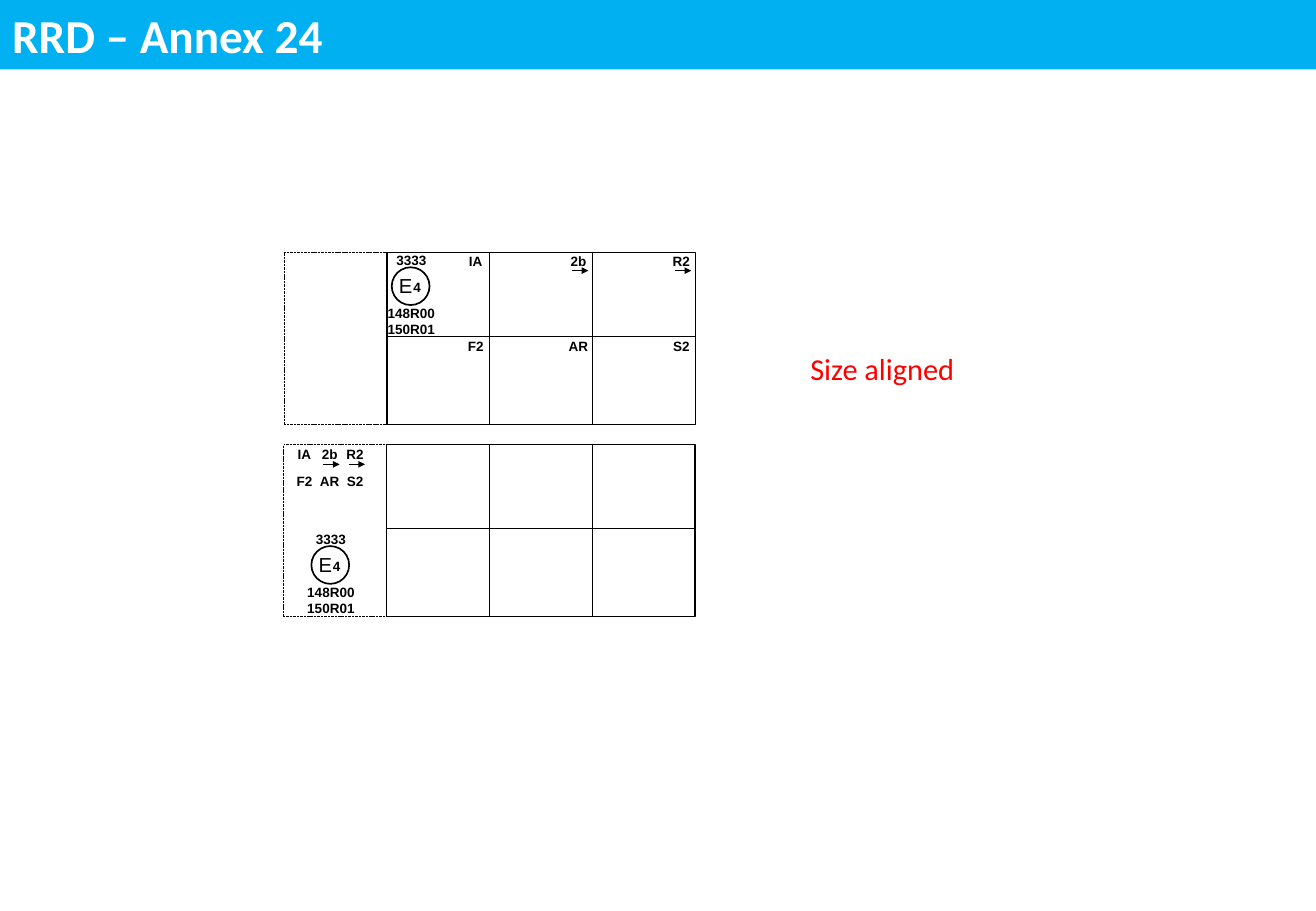
"""Build the RRD Annex 24 slide with two lamp marking diagrams."""
from dataclasses import dataclass
from typing import Any

from lxml import etree
from pptx import Presentation
from pptx.dml.color import RGBColor
from pptx.enum.dml import MSO_LINE
from pptx.enum.shapes import MSO_CONNECTOR, MSO_SHAPE
from pptx.enum.text import MSO_ANCHOR, MSO_AUTO_SIZE, PP_ALIGN
from pptx.oxml.ns import qn
from pptx.util import Cm, Pt

BLACK = RGBColor(0x00, 0x00, 0x00)
WHITE = RGBColor(0xFF, 0xFF, 0xFF)
RED = RGBColor(0xFF, 0x00, 0x00)
BLUE = RGBColor(0x00, 0xB0, 0xF0)

STRAIGHT = MSO_CONNECTOR.STRAIGHT
RECTANGLE = MSO_SHAPE.RECTANGLE
OVAL = MSO_SHAPE.OVAL
SHORT_DASH = MSO_LINE.SQUARE_DOT
LEFT = PP_ALIGN.LEFT
CENTER = PP_ALIGN.CENTER
MIDDLE = MSO_ANCHOR.MIDDLE
TOP = MSO_ANCHOR.TOP
NO_AUTOFIT = MSO_AUTO_SIZE.NONE

TITLE_FORMAT = {"name": "Calibri", "size": Pt(28), "bold": True}
NOTE_FORMAT = {"name": "Calibri", "size": Pt(18), "bold": False}
CODE_FORMAT = {"name": "Arial", "size": Pt(8), "bold": True}
LETTER_FORMAT = {"name": "Arial", "size": Pt(12), "bold": False}
ARROWHEAD_FORMAT = {"type": "triangle", "w": "sm", "len": "sm"}

COLUMN_WIDTH = 2.15
COLUMNS = 3
GRID_HEIGHT = 3.6
UPPER_ROW_HEIGHT = 1.75
DASH_OVERLAP = 0.84
CIRCLE_SIZE = 0.79
ARROW_START = 0.36
ARROW_END = 0.7
ARROW_DROP = 0.5
LAMP_CODES = (("IA", "2b", "R2"), ("F2", "AR", "S2"))
ARROW_CODES = ("2b", "R2")


@dataclass(frozen=True)
class Diagram:
    """Positions in centimetres of one lamp grid and its markings."""

    left: float
    top: float
    circle_left: float
    circle_top: float
    codes_left: float
    codes_top: float
    code_step: float
    row_step: float


@dataclass(frozen=True)
class Label:
    """A text box placed relative to the approval circle."""

    text: str
    left: float
    top: float
    width: float
    height: float
    font_format: dict[str, Any]
    alignment: PP_ALIGN


DIAGRAMS = (
    Diagram(8.09, 5.28, 8.19, 5.59, 9.45, 5.16, 2.15, 1.78),
    Diagram(8.08, 9.3, 6.51, 11.42, 5.87, 9.21, 0.53, 0.55),
)
APPROVAL_LABELS = (
    Label("E", -0.1, 0, 0.89, 0.76, LETTER_FORMAT, LEFT),
    Label("4", 0.2, 0.13, 0.61, 0.61, CODE_FORMAT, LEFT),
    Label("3333", -0.34, -0.45, 1.5, 0.61, CODE_FORMAT, CENTER),
    Label("148R00\n150R01", -0.53, 0.66, 1.88, 0.94, CODE_FORMAT, CENTER),
)


def write_text(shape: Any, text: str, font_format: dict[str, Any],
               color: RGBColor, alignment: PP_ALIGN, anchor: MSO_ANCHOR) -> None:
    """Fill a shape with formatted text."""
    frame = shape.text_frame
    frame.text = text
    frame_format = {"word_wrap": True, "auto_size": NO_AUTOFIT, "vertical_anchor": anchor}
    for name, value in frame_format.items():
        setattr(frame, name, value)
    for paragraph in frame.paragraphs:
        paragraph.alignment = alignment
        for name, value in font_format.items():
            setattr(paragraph.font, name, value)
        paragraph.font.color.rgb = color


def add_label(shapes: Any, label: Label, left: float = 0, top: float = 0,
              color: RGBColor = BLACK) -> None:
    """Add a text box shifted by the given distance."""
    box = shapes.add_textbox(Cm(left + label.left), Cm(top + label.top),
                             Cm(label.width), Cm(label.height))
    write_text(box, label.text, label.font_format, color, label.alignment, TOP)


def add_outline(shapes: Any, kind: MSO_SHAPE, left: float, top: float,
                width: float, height: float, weight: float) -> None:
    """Add an unfilled shape with a black outline."""
    shape = shapes.add_shape(kind, Cm(left), Cm(top), Cm(width), Cm(height))
    shape.shadow.inherit = False
    shape.fill.background()
    shape.line.color.rgb = BLACK
    shape.line.width = Pt(weight)


def add_line(shapes: Any, start: tuple[float, float], end: tuple[float, float],
             weight: float = 0.75, dashed: bool = False, arrow: bool = False) -> None:
    """Add a black line, dashed or with an arrowhead if asked."""
    connector = shapes.add_connector(STRAIGHT, Cm(start[0]), Cm(start[1]),
                                     Cm(end[0]), Cm(end[1]))
    connector.line.color.rgb = BLACK
    connector.line.width = Pt(weight)
    if dashed:
        connector.line.dash_style = SHORT_DASH
    properties = connector._element.spPr
    if arrow:
        etree.SubElement(properties.find(qn("a:ln")), qn("a:tailEnd"), ARROWHEAD_FORMAT)
    etree.SubElement(properties, qn("a:effectLst"))


def add_grid(shapes: Any, diagram: Diagram) -> None:
    """Draw the lamp grid and the dashed field to its left."""
    left, top = diagram.left, diagram.top
    right, bottom = left + COLUMNS * COLUMN_WIDTH, top + GRID_HEIGHT
    add_outline(shapes, RECTANGLE, left, top, right - left, GRID_HEIGHT, 0.75)
    for column in range(COLUMNS):
        x = left + column * COLUMN_WIDTH
        add_line(shapes, (x, top), (x, bottom))
    divider = top + UPPER_ROW_HEIGHT
    add_line(shapes, (left, divider), (right, divider))
    outer = left - COLUMN_WIDTH
    for y in (top, bottom):
        add_line(shapes, (left + DASH_OVERLAP, y), (outer, y), 0.5, dashed=True)
    add_line(shapes, (outer, bottom), (outer, top), 0.5, dashed=True)


def add_markings(shapes: Any, diagram: Diagram) -> None:
    """Add the approval mark and the lamp codes with their arrows."""
    add_outline(shapes, OVAL, diagram.circle_left, diagram.circle_top,
                CIRCLE_SIZE, CIRCLE_SIZE, 1)
    for label in APPROVAL_LABELS:
        add_label(shapes, label, diagram.circle_left, diagram.circle_top)
    for row, codes in enumerate(LAMP_CODES):
        for column, code in enumerate(codes):
            x = diagram.codes_left + column * diagram.code_step
            y = diagram.codes_top + row * diagram.row_step
            add_label(shapes, Label(code, x, y, 0.99, 0.61, CODE_FORMAT, CENTER))
            if code in ARROW_CODES:
                arrow_y = y + ARROW_DROP
                add_line(shapes, (x + ARROW_START, arrow_y), (x + ARROW_END, arrow_y), arrow=True)


def main() -> None:
    """Create and save the presentation."""
    presentation = Presentation()
    presentation.slide_width, presentation.slide_height = Cm(27.51), Cm(19.05)
    slide = presentation.slides.add_slide(presentation.slide_layouts[5])
    title = slide.shapes.title
    title.left, title.top, title.width, title.height = Cm(0), Cm(0), Cm(27.51), Cm(1.45)
    title.fill.solid()
    title.fill.fore_color.rgb = BLUE
    write_text(title, "RRD – Annex 24", TITLE_FORMAT, WHITE, LEFT, MIDDLE)
    for diagram in DIAGRAMS:
        group = slide.shapes.add_group_shape()
        add_grid(group.shapes, diagram)
        add_markings(group.shapes, diagram)
    note = Label("Size aligned", 16.69, 7.19, 4.83, 1.04, NOTE_FORMAT, LEFT)
    add_label(slide.shapes, note, color=RED)
    presentation.save("out.pptx")


if __name__ == "__main__":
    main()
